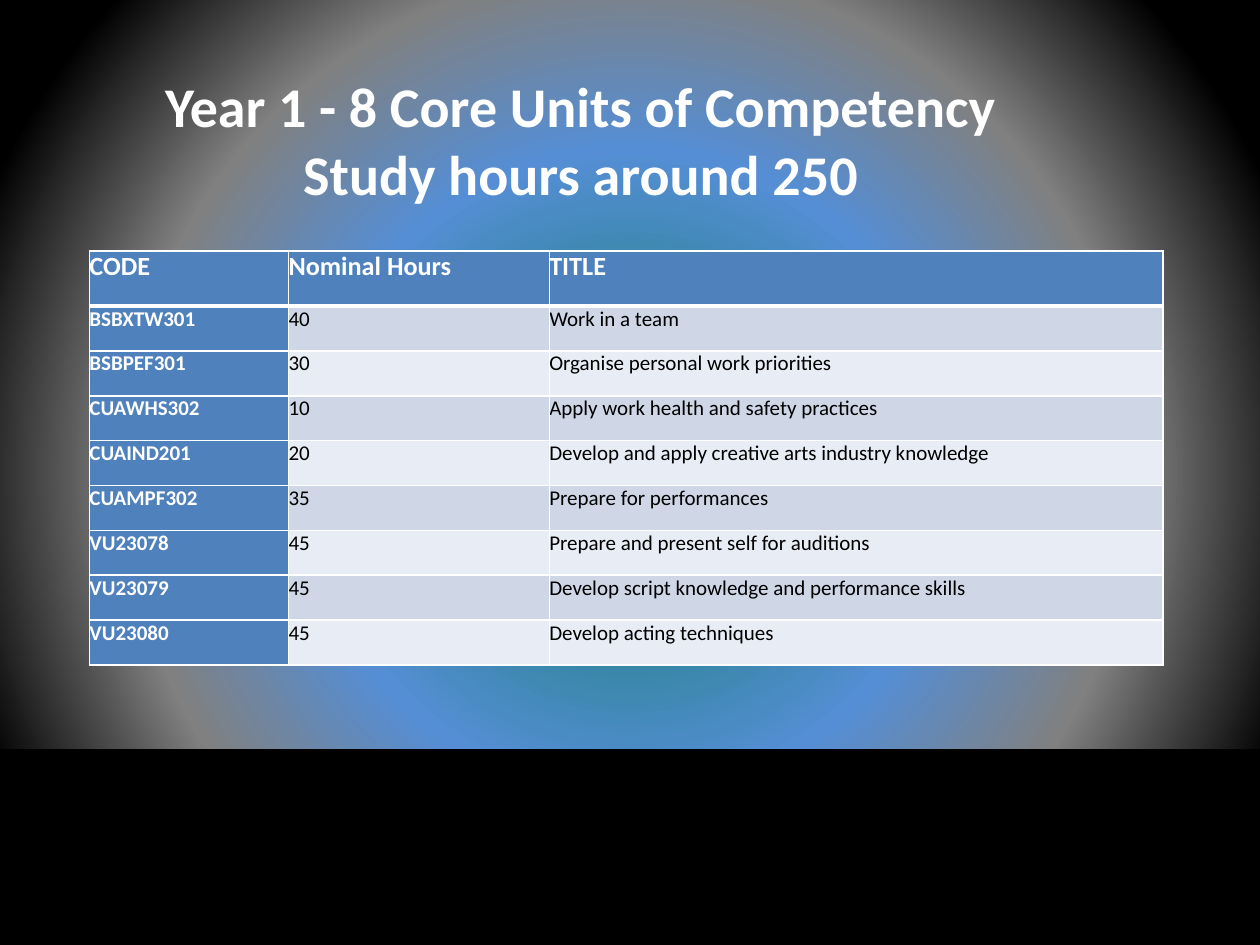
from pptx import Presentation
from pptx.dml.color import RGBColor
from pptx.enum.shapes import MSO_SHAPE
from pptx.enum.text import MSO_ANCHOR, PP_ALIGN
from pptx.oxml import parse_xml
from pptx.oxml.ns import nsdecls
from pptx.util import Inches, Pt

TITLE = "Year 1 - 8 Core Units of Competency\vStudy hours around 250"
HEADER = ("CODE", "Nominal Hours", "TITLE")
UNITS = [
    ("BSBXTW301", 40, "Work in a team"),
    ("BSBPEF301", 30, "Organise personal work priorities"),
    ("CUAWHS302", 10, "Apply work health and safety practices"),
    ("CUAIND201", 20, "Develop and apply creative arts industry knowledge"),
    ("CUAMPF302", 35, "Prepare for performances"),
    ("VU23078", 45, "Prepare and present self for auditions"),
    ("VU23079", 45, "Develop script knowledge and performance skills"),
    ("VU23080", 45, "Develop acting techniques"),
]

FONT = "Calibri"
WHITE = RGBColor(0xFF, 0xFF, 0xFF)
BLACK = RGBColor(0x00, 0x00, 0x00)
BLUE = RGBColor(0x4F, 0x81, 0xBD)
BANDS = (RGBColor(0xCF, 0xD7, 0xE7), RGBColor(0xE8, 0xEC, 0xF4))
GLOW = [
    (20, RGBColor(0x31, 0x85, 0x9C)),
    (41, RGBColor(0x55, 0x8E, 0xD5)),
    (64, RGBColor(0x80, 0x80, 0x80)),
    (89, BLACK),
]

SLIDE_W, SLIDE_H = 10, 7.5
FLOOR_TOP = 5.96
TABLE_LEFT, TABLE_TOP, TABLE_H = 0.71, 1.99, 3.29
COLUMN_WIDTHS = (1.58, 2.07, 4.87)
HEADER_H = 0.44
UNIT_H = (TABLE_H - HEADER_H) / len(UNITS)


def set_glow_background(slide):
    stops = "".join(
        f'<a:gs pos="{share * 1000}"><a:srgbClr val="{color}"/></a:gs>'
        for share, color in GLOW
    )
    background = parse_xml(
        f'<p:bg {nsdecls("p", "a")}><p:bgPr><a:gradFill rotWithShape="1">'
        f"<a:gsLst>{stops}</a:gsLst>"
        '<a:path path="circle">'
        '<a:fillToRect l="50000" t="50000" r="50000" b="50000"/></a:path>'
        "</a:gradFill><a:effectLst/></p:bgPr></p:bg>"
    )
    slide.element.cSld.insert(0, background)


def add_floor(slide):
    """Black band across the foot of the slide, behind everything else."""
    floor = slide.shapes.add_shape(
        MSO_SHAPE.RECTANGLE, 0, Inches(FLOOR_TOP),
        Inches(SLIDE_W), Inches(SLIDE_H - FLOOR_TOP),
    )
    floor.shadow.inherit = False
    floor.fill.solid()
    floor.fill.fore_color.rgb = BLACK
    floor.line.color.rgb = BLACK
    floor.line.width = Pt(2)
    slide.shapes.element.insert(2, floor.element)


def style_font(font, size, color, bold):
    font.name = FONT
    font.size = Pt(size)
    font.color.rgb = color
    font.bold = bold


def add_title(slide):
    title = slide.shapes.title
    title.left, title.top = Inches(0.11), Inches(0.48)
    title.width, title.height = Inches(9), Inches(1.25)
    frame = title.text_frame
    frame.text = TITLE
    frame.word_wrap = True
    frame.vertical_anchor = MSO_ANCHOR.MIDDLE
    frame.margin_left = frame.margin_right = Inches(0.05)
    frame.margin_top = frame.margin_bottom = Inches(0.05)
    frame.paragraphs[0].alignment = PP_ALIGN.CENTER
    for run in frame.paragraphs[0].runs:
        style_font(run.font, 32, WHITE, True)


def set_borders(cell, bottom):
    """White lines of 1 pt, with the bottom one as wide as given."""
    properties = cell._tc.get_or_add_tcPr()
    widths = {"lnL": 1, "lnR": 1, "lnT": 1, "lnB": bottom}
    for place, (side, width) in enumerate(widths.items()):
        line = parse_xml(
            f'<a:{side} {nsdecls("a")} w="{Pt(width)}"><a:solidFill>'
            f'<a:srgbClr val="{WHITE}"/></a:solidFill></a:{side}>'
        )
        properties.insert(place, line)


def fill_cell(cell, value, size, color, bold, fill, bottom):
    cell.margin_left = cell.margin_right = 0
    cell.margin_top = cell.margin_bottom = 0
    cell.text_frame.text = str(value)
    style_font(cell.text_frame.paragraphs[0].runs[0].font, size, color, bold)
    cell.fill.solid()
    cell.fill.fore_color.rgb = fill
    set_borders(cell, bottom)


def add_units_table(slide):
    rows = [HEADER, *UNITS]
    table = slide.shapes.add_table(
        len(rows), len(HEADER), Inches(TABLE_LEFT), Inches(TABLE_TOP),
        Inches(sum(COLUMN_WIDTHS)), Inches(TABLE_H),
    ).table
    for column, width in zip(table.columns, COLUMN_WIDTHS):
        column.width = Inches(width)
    for r, values in enumerate(rows):
        is_header = r == 0
        table.rows[r].height = Inches(HEADER_H if is_header else UNIT_H)
        for c, value in enumerate(values):
            strong = is_header or c == 0
            fill_cell(
                table.cell(r, c), value,
                size=15 if is_header else 12,
                color=WHITE if strong else BLACK,
                bold=strong,
                fill=BLUE if strong else BANDS[(r - 1) % 2],
                # The line under the header also tops the first unit.
                bottom=3 if is_header else 1,
            )
    for c in range(len(HEADER)):
        top = table.cell(1, c)._tc.tcPr.find("{*}lnT")
        top.set("w", str(Pt(3)))


def main():
    prs = Presentation()
    prs.slide_width, prs.slide_height = Inches(SLIDE_W), Inches(SLIDE_H)
    slide = prs.slides.add_slide(prs.slide_layouts[5])
    set_glow_background(slide)
    add_floor(slide)
    add_title(slide)
    add_units_table(slide)
    prs.save("out.pptx")


if __name__ == "__main__":
    main()
